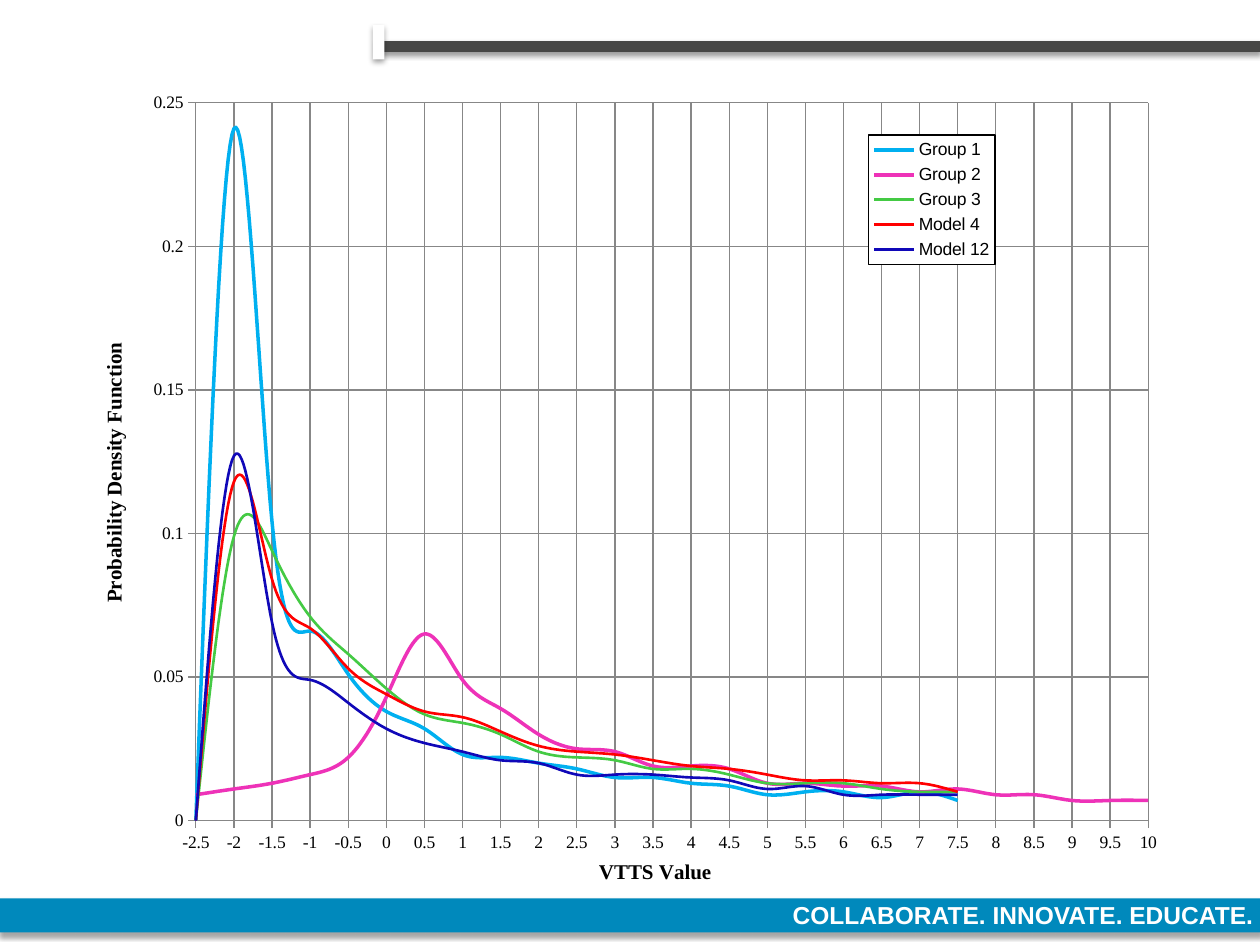
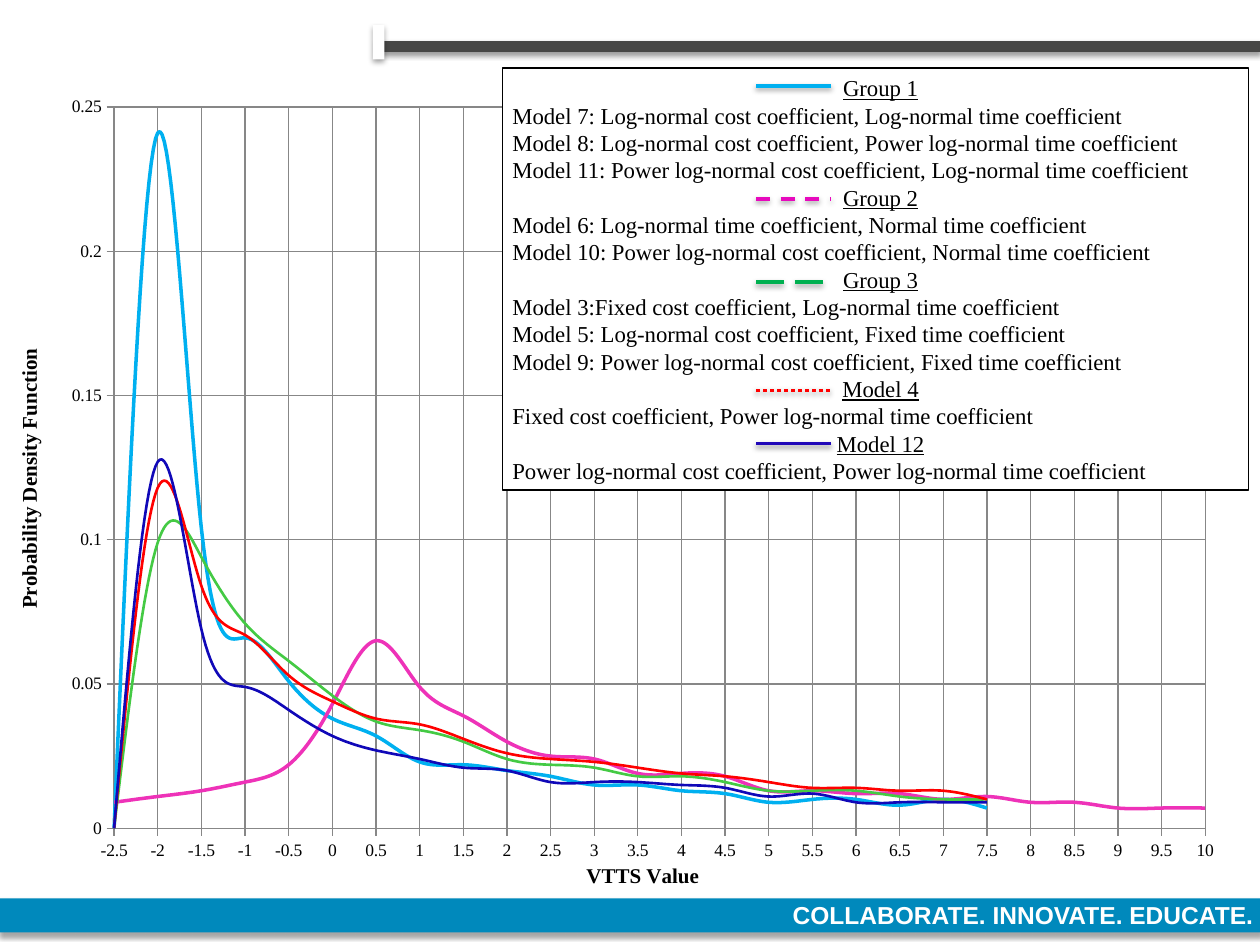
from dataclasses import dataclass

from pptx import Presentation
from pptx.chart import data as cd
from pptx.dml.color import RGBColor
from pptx.enum import chart as ce, dml, shapes, text
from pptx.oxml import ns, parse_xml
from pptx.util import Cm, Pt

SANS, SERIF = "Arial", "Times New Roman"
COLORS = {
    "white": "FFFFFF", "black": "000000", "grid": "878787",
    "rule": "474746", "band": "0089BC",
    "cyan": "00B0F0", "pink": "EE32B8", "lime": "44CA44",
    "red": "FF0000", "navy": "1008B8",
    "key_pink": "E709BD", "key_green": "00B050", "key_navy": "2108B8",
}
CATEGORIES = [f"{i / 2:g}" for i in range(-5, 21)]


@dataclass
class Curve:
    name: str
    color: str
    width: float
    values: list[float]


@dataclass
class KeyEntry:
    heading: str
    models: list[str]
    color: str
    y: float
    dash: dml.MSO_LINE = dml.MSO_LINE.SOLID


@dataclass
class Box:
    x: float
    y: float
    w: float
    h: float

    def cm(self) -> list[Cm]:
        return [Cm(v) for v in (self.x, self.y, self.w, self.h)]


CURVES = [
    Curve("Group 1", "cyan", 2, [
        0, 0.241, 0.104, 0.066, 0.051, 0.038, 0.032, 0.023, 0.022, 0.02, 0.018,
        0.015, 0.015, 0.013, 0.012, 0.009, 0.01, 0.01, 0.008, 0.01, 0.007]),
    Curve("Group 2", "pink", 2, [
        0.009, 0.011, 0.013, 0.016, 0.022, 0.043, 0.065, 0.049, 0.039, 0.03, 0.025,
        0.024, 0.019, 0.019, 0.018, 0.013, 0.013, 0.012, 0.012, 0.01, 0.011,
        0.009, 0.009, 0.007, 0.007, 0.007]),
    Curve("Group 3", "lime", 1.5, [
        0, 0.099, 0.094, 0.071, 0.058, 0.046, 0.037, 0.034, 0.03, 0.024, 0.022,
        0.021, 0.018, 0.018, 0.016, 0.013, 0.013, 0.013, 0.011, 0.01, 0.01]),
    Curve("Model 4", "red", 1.5, [
        0, 0.118, 0.084, 0.067, 0.053, 0.044, 0.038, 0.036, 0.031, 0.026, 0.024,
        0.023, 0.021, 0.019, 0.018, 0.016, 0.014, 0.014, 0.013, 0.013, 0.01]),
    Curve("Model 12", "navy", 1.5, [
        0, 0.127, 0.069, 0.049, 0.041, 0.032, 0.027, 0.024, 0.021, 0.02, 0.016,
        0.016, 0.016, 0.015, 0.014, 0.011, 0.012, 0.009, 0.009, 0.009, 0.009]),
]

KEY = [
    KeyEntry("Group 1", [
        "Model 7: Log-normal cost coefficient, Log-normal time coefficient",
        "Model 8: Log-normal cost coefficient, Power log-normal time coefficient",
        "Model 11: Power log-normal cost coefficient, Log-normal time coefficient",
    ], "cyan", 1.73),
    KeyEntry("Group 2", [
        "Model 6: Log-normal time coefficient, Normal time coefficient",
        "Model 10: Power log-normal cost coefficient, Normal time coefficient",
    ], "key_pink", 4.01, dml.MSO_LINE.DASH),
    KeyEntry("Group 3", [
        "Model 3:Fixed cost coefficient, Log-normal time coefficient",
        "Model 5: Log-normal cost coefficient, Fixed time coefficient",
        "Model 9: Power log-normal cost coefficient, Fixed time coefficient",
    ], "key_green", 5.69, dml.MSO_LINE.LONG_DASH),
    KeyEntry("Model 4", [
        "Fixed cost coefficient, Power log-normal time coefficient",
    ], "red", 7.87, dml.MSO_LINE.ROUND_DOT),
    KeyEntry("Model 12", [
        "Power log-normal cost coefficient, Power log-normal time coefficient",
    ], "key_navy", 8.94),
]


def rgb(name: str) -> RGBColor:
    return RGBColor.from_string(COLORS[name])


def set_font(font, size: float, face: str, color: str = "black", bold: bool = False) -> None:
    font.size, font.name, font.bold = Pt(size), face, bold
    font.color.rgb = rgb(color)


def set_line(line, color: str, width: float) -> None:
    line.color.rgb = rgb(color)
    line.width = Pt(width)


def cast_shadow(shape, distance: float, opacity: int) -> None:
    """Add a soft shadow below; call it after fill and line are set."""
    shape._element.spPr.append(parse_xml(
        f'<a:effectLst {ns.nsdecls("a")}><a:outerShdw blurRad="{Pt(3.1)}" '
        f'dist="{Pt(distance)}" dir="5400000" rotWithShape="0"><a:srgbClr val="{COLORS["black"]}">'
        f'<a:alpha val="{opacity * 1000}"/></a:srgbClr></a:outerShdw></a:effectLst>'))


def add_rule(s, x1: float, x2: float, y: float, color: str, width: float):
    c = s.shapes.add_connector(shapes.MSO_CONNECTOR.STRAIGHT, Cm(x1), Cm(y), Cm(x2), Cm(y))
    set_line(c.line, color, width)
    cast_shadow(c, 1.6, 38)
    return c


def add_bar(s, box: Box, color: str):
    sp = s.shapes.add_shape(shapes.MSO_SHAPE.RECTANGLE, *box.cm())
    sp.fill.solid()
    sp.fill.fore_color.rgb = rgb(color)
    sp.line.fill.background()
    cast_shadow(sp, 1.8, 35)
    return sp


def add_motto(s):
    sp = s.shapes.add_textbox(*Box(14.27, 18.01, 11.25, 0.84).cm())
    sp.text_frame.word_wrap = True
    p = sp.text_frame.paragraphs[0]
    p.text = "COLLABORATE. INNOVATE. EDUCATE."
    p.alignment = text.PP_ALIGN.RIGHT
    set_font(p.font, 14, SANS, "white", True)
    return sp


def decorate_layout(s) -> None:
    """Draw the shared frame on a slide and move it to that slide's layout."""
    layout = s.slide_layout
    for ph in list(layout.placeholders):
        ph._element.getparent().remove(ph._element)
    frame = [
        add_rule(s, 7.59, 25.4, 0.94, "rule", 6),
        add_bar(s, Box(7.52, 0.51, 0.23, 0.69), "white"),
        add_bar(s, Box(0, 18.11, 25.43, 0.69), "band"),
        add_motto(s),
    ]
    for sp in frame:
        layout.shapes._spTree.append(sp._element)


def set_layout(parent, index: int, box: Box, target: str = "") -> None:
    """Place a chart part by fractions of the chart area."""
    for old in parent.findall(ns.qn("c:layout")):
        parent.remove(old)
    sizes = "".join(f'<c:{k} val="{getattr(box, k)}"/>' for k in "xywh")
    parent.insert(index, parse_xml(
        f'<c:layout {ns.nsdecls("c")}><c:manualLayout>{target}'
        f'<c:xMode val="edge"/><c:yMode val="edge"/>{sizes}</c:manualLayout></c:layout>'))


def fill_properties(line: str = "<a:ln><a:noFill/></a:ln>"):
    return parse_xml(
        f'<c:spPr {ns.nsdecls("c", "a")}><a:solidFill><a:srgbClr val="{COLORS["white"]}"/>'
        f'</a:solidFill>{line}</c:spPr>')


def format_axis(axis, title: str) -> None:
    axis.has_major_gridlines = True
    for line in (axis.format.line, axis.major_gridlines.format.line):
        set_line(line, "grid", 0.75)
    axis.major_tick_mark = ce.XL_TICK_MARK.OUTSIDE
    axis.minor_tick_mark = ce.XL_TICK_MARK.NONE
    set_font(axis.tick_labels.font, 10, SERIF)
    p = axis.axis_title.text_frame.paragraphs[0]
    p.text = title
    set_font(p.font, 12, SERIF, bold=True)


def add_density_chart(s, box: Box, plot_box: Box):
    data = cd.CategoryChartData()
    data.categories = CATEGORIES
    for curve in CURVES:
        gap = [None] * (len(CATEGORIES) - len(curve.values))
        data.add_series(curve.name, curve.values + gap)
    chart = s.shapes.add_chart(ce.XL_CHART_TYPE.LINE, *box.cm(), data).chart
    chart.has_title = chart.has_legend = False
    set_font(chart.font, 10, SANS)

    plot = chart.plots[0]
    plot.vary_by_categories = False
    for series, curve in zip(plot.series, CURVES):
        series.smooth = True
        set_line(series.format.line, curve.color, curve.width)

    format_axis(chart.category_axis, "VTTS Value")
    axis = chart.value_axis
    format_axis(axis, "Probability Density Function")
    axis.minimum_scale, axis.maximum_scale, axis.major_unit = 0, 0.25, 0.05
    axis.tick_labels.number_format = "General"
    axis.tick_labels.number_format_is_linked = False
    body = axis.axis_title.text_frame._txBody.find(ns.qn("a:bodyPr"))
    body.set("rot", "-5400000")
    body.set("vert", "horz")
    axis._element.find(ns.qn("c:majorUnit")).addprevious(
        parse_xml(f'<c:crossBetween {ns.nsdecls("c")} val="midCat"/>'))

    area = chart._chartSpace.chart.plotArea
    set_layout(area, 0, plot_box, '<c:layoutTarget val="inner"/>')
    area.append(fill_properties())
    return chart


def add_legend(chart, box: Box) -> None:
    chart.has_legend = True
    legend = chart.legend
    legend.position = ce.XL_LEGEND_POSITION.RIGHT
    legend.include_in_layout = False
    set_font(legend.font, 10, SANS)
    element = legend._element
    set_layout(element, 1, box)
    border = (f'<a:ln w="{Pt(0.75)}"><a:solidFill><a:srgbClr val="{COLORS["black"]}"/>'
              '</a:solidFill></a:ln>')
    element.find(ns.qn("c:txPr")).addprevious(fill_properties(border))


def add_model_key(s) -> None:
    sp = s.shapes.add_shape(shapes.MSO_SHAPE.RECTANGLE, *Box(10.13, 1.37, 15.04, 8.51).cm())
    sp.shadow.inherit = False
    sp.fill.solid()
    sp.fill.fore_color.rgb = rgb("white")
    set_line(sp.line, "black", 0.75)
    tf = sp.text_frame
    tf.word_wrap = True
    tf.vertical_anchor = text.MSO_ANCHOR.MIDDLE
    tf.margin_left, tf.margin_right = Cm(0.2), 0
    tf.margin_top = tf.margin_bottom = Cm(0.13)

    lines = [(line, line == entry.heading) for entry in KEY
             for line in (entry.heading, *entry.models)]
    for i, (line, is_heading) in enumerate(lines):
        p = tf.add_paragraph() if i else tf.paragraphs[0]
        p.text = line
        p.alignment = text.PP_ALIGN.CENTER if is_heading else text.PP_ALIGN.LEFT
        set_font(p.font, 13, SERIF)
        p.font.underline = is_heading
    for entry in KEY:
        add_rule(s, 15.24, 16.76, entry.y, entry.color, 2).line.dash_style = entry.dash


def main() -> None:
    prs = Presentation()
    prs.slide_width, prs.slide_height = Cm(25.4), Cm(19.05)
    blank = prs.slide_layouts[6]

    s = prs.slides.add_slide(blank)
    decorate_layout(s)
    chart = add_density_chart(s, Box(1.88, 1.65, 21.77, 16.28), Box(0.095, 0.026, 0.882, 0.889))
    add_legend(chart, Box(0.718, 0.066, 0.117, 0.16))

    s = prs.slides.add_slide(blank)
    add_density_chart(s, Box(0.23, 1.65, 24.94, 16.36), Box(0.083, 0.031, 0.882, 0.889))
    add_model_key(s)
    prs.save("out.pptx")


if __name__ == "__main__":
    main()
